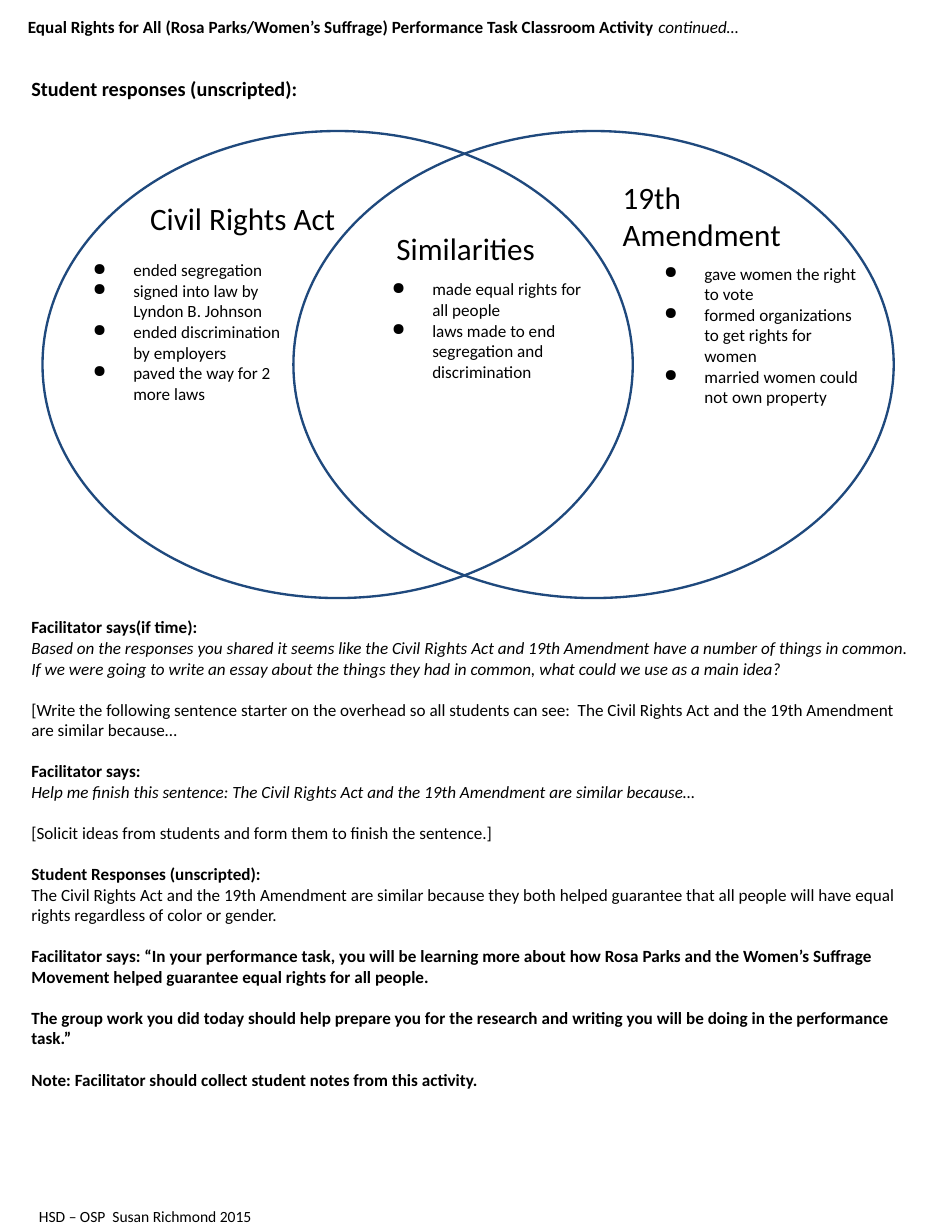
from lxml.etree import SubElement
from pptx import Presentation
from pptx.dml.color import RGBColor
from pptx.enum.shapes import MSO_SHAPE
from pptx.oxml.ns import qn
from pptx.util import Inches, Pt

BLACK = RGBColor(0x00, 0x00, 0x00)
NAVY = RGBColor(0x1F, 0x49, 0x7D)

NORMAL = {}
BOLD = {"bold": True}
ITALIC = {"italic": True}


class Handout:
    font_name = "Calibri"
    text_color = BLACK
    outline_color = NAVY
    body_size = 11
    title_size = 20
    inset = 0.11

    def __init__(self, slide):
        self.slide = slide

    def box(self, left, top, width, height, inset=inset):
        shape = self.slide.shapes.add_textbox(
            Inches(left), Inches(top), Inches(width), Inches(height))
        frame = shape.text_frame
        margins = ("margin_left", "margin_top", "margin_right", "margin_bottom")
        values = {name: Inches(inset) for name in margins} if inset else {}
        for name, value in {"word_wrap": True, **values}.items():
            setattr(frame, name, value)
        return frame

    def paragraph(self, frame, runs, size=body_size, gap=0):
        """Fill the first paragraph of the frame, or add one below the last."""
        paragraph = frame.paragraphs[0]
        if paragraph.runs:
            paragraph = frame.add_paragraph()
        if gap:
            paragraph.space_before = Pt(gap)
        for text, style in runs:
            run = paragraph.add_run()
            run.text = text
            values = {"name": self.font_name, "size": Pt(size), **style}
            for name, value in values.items():
                setattr(run.font, name, value)
            run.font.color.rgb = self.text_color
        return paragraph

    def line(self, left, top, width, height, runs, size=body_size, inset=inset):
        self.paragraph(self.box(left, top, width, height, inset), runs, size)

    def bullets(self, left, top, width, height, items):
        frame = self.box(left, top, width, height)
        for item in items:
            properties = self.paragraph(frame, [(item, NORMAL)])._p.get_or_add_pPr()
            properties.set("marL", str(Inches(0.56)))
            properties.set("indent", str(Inches(-0.36)))
            color = SubElement(properties, qn("a:buClr"))
            SubElement(color, qn("a:srgbClr"), val=str(self.text_color))
            SubElement(properties, qn("a:buChar"), char="●")

    def ellipse(self, left, top, width, height):
        shape = self.slide.shapes.add_shape(
            MSO_SHAPE.OVAL, Inches(left), Inches(top), Inches(width), Inches(height))
        shape.shadow.inherit = False
        shape.fill.background()
        shape.line.color.rgb = self.outline_color
        shape.line.width = Pt(1.5)


# Script of the activity: text, style, and whether a blank line's gap precedes it
SCRIPT = [
    ("Based on the responses you shared it seems like the Civil Rights Act and 19th "
     "Amendment have a number of things in common.  If we were going to write an essay "
     "about the things they had in common, what could we use as a main idea?", ITALIC, False),
    ("[Write the following sentence starter on the overhead so all students can see:  "
     "The Civil Rights Act and the 19th Amendment are similar because…", NORMAL, True),
    ("Facilitator says:", BOLD, True),
    ("Help me finish this sentence: The Civil Rights Act and the 19th Amendment are "
     "similar because…", ITALIC, False),
    ("[Solicit ideas from students and form them to finish the sentence.]", NORMAL, True),
    ("Student Responses (unscripted):", BOLD, True),
    ("The Civil Rights Act and the 19th Amendment are similar because they both helped "
     "guarantee that all people will have equal rights regardless of color or gender.",
     NORMAL, False),
    ("Facilitator says: “In your performance task, you will be learning more about how "
     "Rosa Parks and the Women’s Suffrage Movement helped guarantee equal rights for "
     "all people.", BOLD, True),
    ("The group work you did today should help prepare you for the research and writing "
     "you will be doing in the performance task.”", BOLD, True),
    ("Note: Facilitator should collect student notes from this activity.", BOLD, True),
]
LINE_GAP = 13.2
DIAGRAM_GAP = 332


def main():
    presentation = Presentation()
    presentation.slide_width = Inches(8.5)
    presentation.slide_height = Inches(11)
    handout = Handout(presentation.slides.add_slide(presentation.slide_layouts[6]))

    # Footer
    handout.line(0.25, 10.73, 6.17, 0.27,
                 [("HSD – OSP  Susan Richmond 2015", NORMAL)], size=10, inset=None)

    # Body text, with room for the diagram under its heading
    body = handout.box(0.17, 0.57, 8.16, 10.09)
    handout.paragraph(body, [("Student responses (unscripted):", BOLD)], size=13)
    handout.paragraph(body, [("Facilitator says(if time):", BOLD)], gap=DIAGRAM_GAP)
    for text, style, spaced in SCRIPT:
        handout.paragraph(body, [(text, style)], gap=LINE_GAP if spaced else 0)

    # Venn diagram
    handout.ellipse(0.38, 1.17, 5.27, 4.17)
    handout.ellipse(2.62, 1.17, 5.36, 4.17)

    # Titles of the diagram's areas
    for title, place in (
        ("Civil Rights Act", (1.23, 1.67, 1.97, 0.35)),
        ("19th Amendment", (5.45, 1.48, 2.18, 0.35)),
        ("Similarities", (3.43, 1.94, 1.57, 0.44)),
    ):
        handout.line(*place, [(title, NORMAL)], size=handout.title_size)

    # Points in the diagram's areas
    handout.bullets(0.52, 2.21, 2.12, 1.87, [
        "ended segregation",
        "signed into law by Lyndon B. Johnson",
        "ended discrimination by employers",
        "paved the way for 2 more laws",
    ])
    handout.bullets(5.62, 2.24, 2.2, 2.22, [
        "gave women the right to vote",
        "formed organizations to get rights for women",
        "married women could not own property",
    ])
    handout.bullets(3.19, 2.38, 2.2, 1.74, [
        "made equal rights for all people",
        "laws made to end segregation and discrimination",
    ])

    # Header
    handout.line(0.15, 0.1, 8.01, 0.29, [
        ("Equal Rights for All (Rosa Parks/Women’s Suffrage) Performance Task "
         "Classroom Activity ", BOLD),
        ("continued…", ITALIC),
    ], inset=None)

    presentation.save("out.pptx")


if __name__ == "__main__":
    main()
